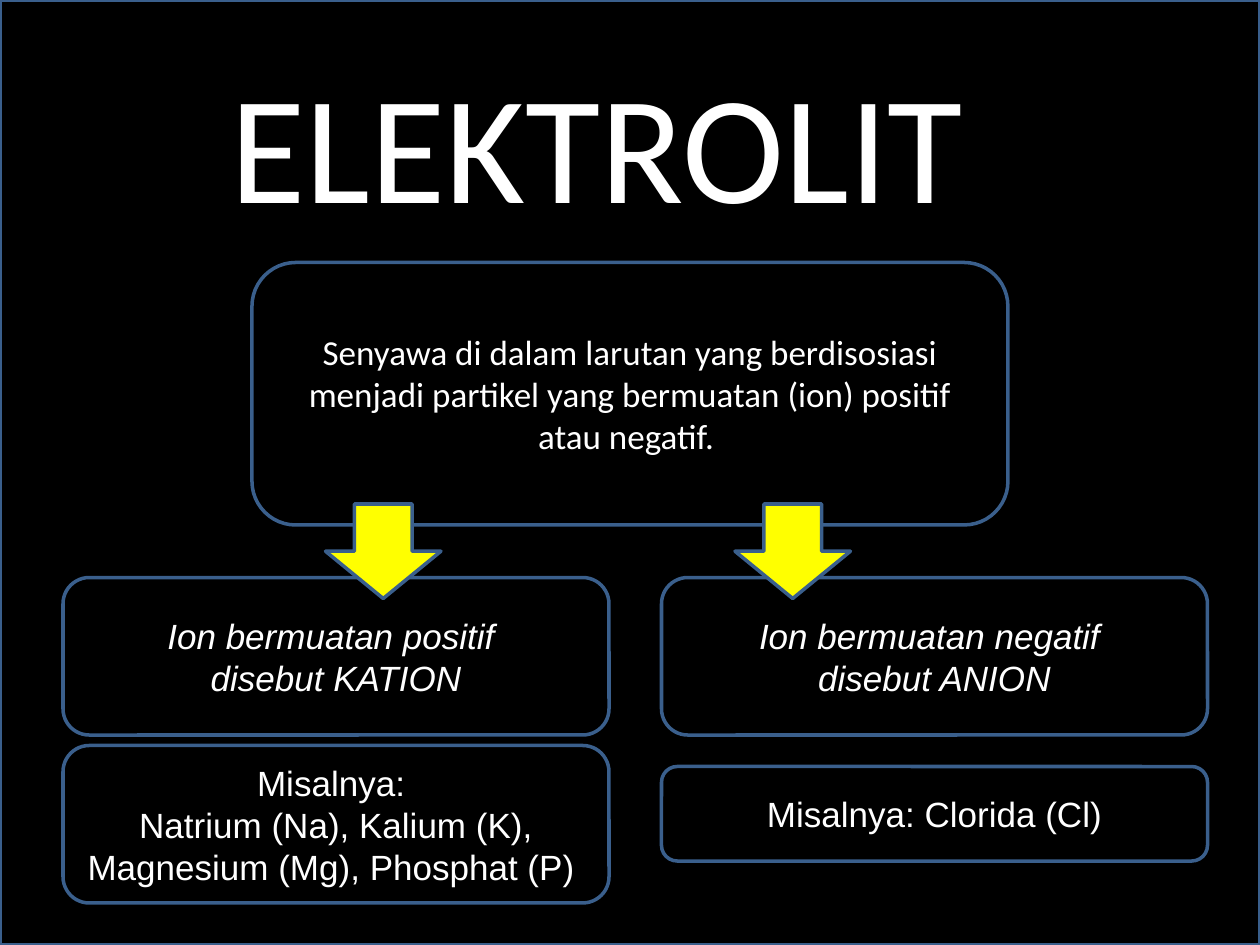
from pptx import Presentation
from pptx.dml.color import RGBColor
from pptx.enum.shapes import MSO_SHAPE
from pptx.enum.text import MSO_ANCHOR, PP_ALIGN
from pptx.util import Pt

BLACK, WHITE, YELLOW, BLUE = "000000", "FFFFFF", "FFFF00", "3A5F8C"


def color(hex_string):
    return RGBColor.from_string(hex_string)


class SlideBuilder:
    """Holds the shared style and the current slide."""

    line_width = 2
    body_size = 20

    def __init__(self, slide):
        self.slide = slide

    def outlined_shape(self, kind, left, top, width, height, fill=None):
        shape = self.slide.shapes.add_shape(
            kind, Pt(left), Pt(top), Pt(width), Pt(height))
        shape.shadow.inherit = False
        if fill:
            shape.fill.solid()
            shape.fill.fore_color.rgb = color(fill)
        else:
            shape.fill.background()
        shape.line.color.rgb = color(BLUE)
        shape.line.width = Pt(self.line_width)
        return shape

    def set_text(self, shape, text, font, size, italic=False):
        frame = shape.text_frame
        frame.word_wrap = True
        frame.vertical_anchor = MSO_ANCHOR.MIDDLE
        frame.text = text
        for paragraph in frame.paragraphs:
            paragraph.alignment = PP_ALIGN.CENTER
            for run in paragraph.runs:
                run.font.name = font
                run.font.size = Pt(size)
                run.font.italic = italic
                run.font.color.rgb = color(WHITE)

    def rounded_box(self, left, top, width, height, text,
                    font="Arial", italic=False):
        box = self.outlined_shape(
            MSO_SHAPE.ROUNDED_RECTANGLE, left, top, width, height)
        self.set_text(box, text, font, self.body_size, italic)

    def down_arrow(self, left, top):
        self.outlined_shape(MSO_SHAPE.DOWN_ARROW, left, top, 66, 54, YELLOW)

    def title(self, text, left, top, width, height, right_inset):
        box = self.slide.shapes.add_textbox(
            Pt(left), Pt(top), Pt(width), Pt(height))
        self.set_text(box, text, "Calibri", 88)
        box.text_frame.margin_right = Pt(right_inset)


def main():
    presentation = Presentation()
    presentation.slide_width, presentation.slide_height = Pt(720), Pt(540)
    slide = presentation.slides.add_slide(presentation.slide_layouts[6])
    builder = SlideBuilder(slide)

    # Backdrop
    builder.outlined_shape(MSO_SHAPE.RECTANGLE, 0, 0, 720, 540, BLACK)

    # Definition
    builder.rounded_box(
        144, 150, 432, 150,
        "Senyawa di dalam larutan yang berdisosiasi menjadi partikel "
        "yang bermuatan (ion) positif atau negatif. ", font="Calibri")

    # Ion types: column left, arrow left, type, examples, examples top, height
    columns = [
        (36, 186, "Ion bermuatan positif \ndisebut KATION",
         "Misalnya: \nNatrium (Na), Kalium (K), Magnesium (Mg), Phosphat (P) ",
         426, 90),
        (378, 420, "Ion bermuatan negatif \ndisebut ANION",
         "Misalnya: Clorida (Cl)", 438, 54),
    ]
    for left, arrow_left, ion_type, examples, top, height in columns:
        builder.rounded_box(left, 330, 312, 90, ion_type, italic=True)
        builder.down_arrow(arrow_left, 288)
        builder.rounded_box(left, top, 312, height, examples)

    # Title, centred slightly left of the middle
    builder.title("ELEKTROLIT", 0, 18, 720, 126, right_inset=45)

    presentation.save("out.pptx")


if __name__ == "__main__":
    main()
